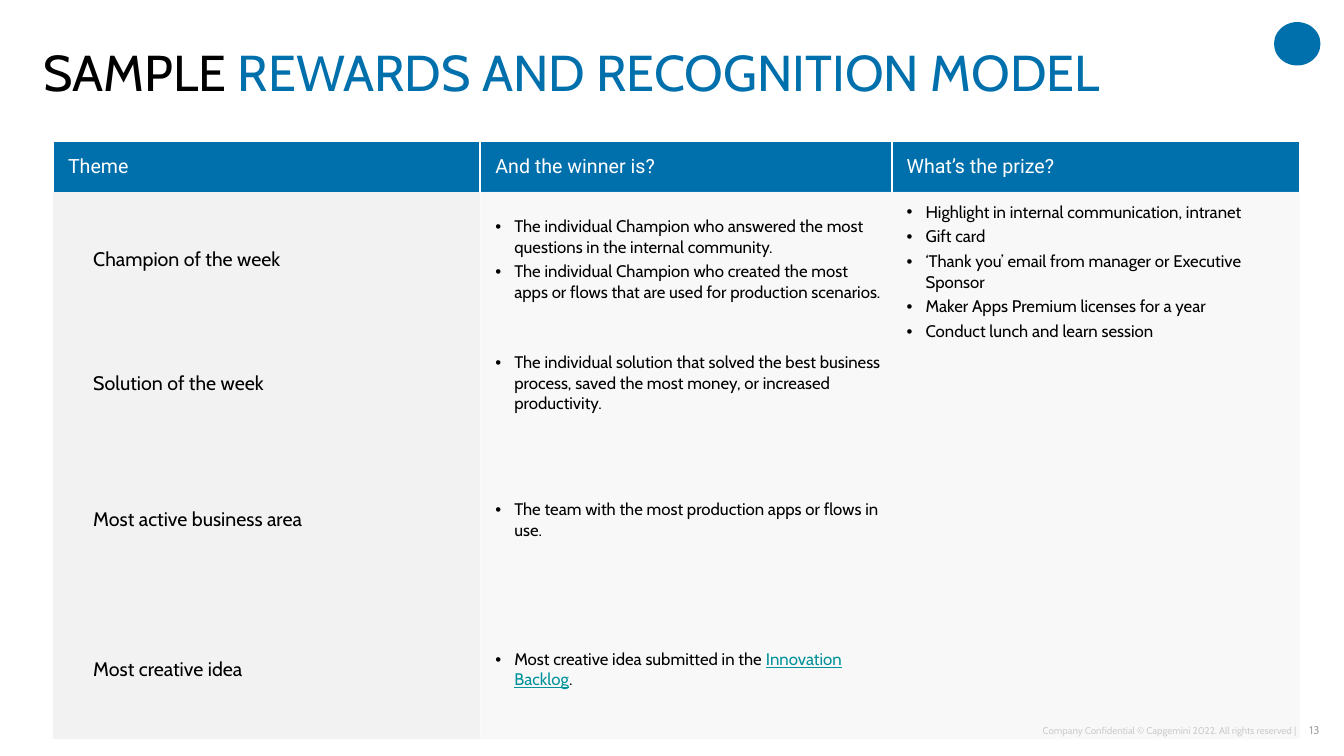
from dataclasses import dataclass
from lxml.etree import SubElement
from pptx import Presentation
from pptx.dml.color import RGBColor
from pptx.enum.shapes import MSO_SHAPE
from pptx.enum.text import MSO_ANCHOR, PP_ALIGN
from pptx.oxml import parse_xml
from pptx.oxml.ns import nsdecls, qn
from pptx.util import Pt


@dataclass(frozen=True)
class Theme:
    """Colours, fonts and type sizes of the slide."""
    blue: str = "0070AD"
    link: str = "00929B"
    black: str = "000000"
    white: str = "FFFFFF"
    pale: str = "F2F2F2"
    grey: str = "A6A6A6"
    font: str = "Cabin"
    head: str = "Roboto"
    title: float = 36
    label: float = 14
    body: float = 12
    page: float = 8
    foot: float = 7
    grid: str = "{2D5ABB26-0587-4C30-8999-92F81FD0307C}"


def apply(item, form):
    """Set each format value on the item."""
    for name, value in form.items():
        setattr(item, name, value)


def inset(left, top, right, low):
    """Return margins as format values."""
    names = ("margin_left", "margin_top", "margin_right", "margin_bottom")
    return {name: Pt(gap) for name, gap in zip(names, (left, top, right, low))}


class Board:
    """Draws elements on one slide in one style."""

    def __init__(self, slide, theme):
        """Keep the slide and its theme."""
        self.slide = slide
        self.theme = theme

    def letter(self, frame, paras, size, color, face=None, form=None, dots=False):
        """Fill a frame with paragraphs of plain or coloured runs."""
        for num, runs in enumerate(paras):
            para = frame.add_paragraph() if num else frame.paragraphs[0]
            if dots:
                self.dot(para)
            apply(para, form or {})
            for part in [runs] if isinstance(runs, str) else runs:
                text, tint = (part, color) if isinstance(part, str) else part
                run = para.add_run()
                run.text = text
                look = {"name": face or self.theme.font, "size": Pt(size),
                        "bold": False, "underline": tint == self.theme.link}
                apply(run.font, look)
                run.font.color.rgb = RGBColor.from_string(tint)

    def dot(self, para):
        """Give a paragraph a hanging bullet."""
        props = para._p.get_or_add_pPr()
        props.set("marL", str(Pt(13.5)))
        props.set("indent", str(-Pt(13.5)))
        SubElement(props, qn("a:buFont"), typeface="Arial")
        SubElement(props, qn("a:buChar"), char="•")
        para.space_after = Pt(3)

    def text(self, area, runs, size, color, pad=0, anchor=MSO_ANCHOR.TOP, form=None):
        """Add a text box."""
        frame = self.slide.shapes.add_textbox(*map(Pt, area)).text_frame
        apply(frame, {"word_wrap": True, "vertical_anchor": anchor,
                      **inset(0, pad, 0, pad)})
        self.letter(frame, [runs], size, color, form=form)

    def mark(self, area):
        """Add a plain oval."""
        oval = self.slide.shapes.add_shape(MSO_SHAPE.OVAL, *map(Pt, area))
        oval.shadow.inherit = False
        oval.fill.solid()
        oval.fill.fore_color.rgb = RGBColor.from_string(self.theme.blue)
        oval.line.fill.background()

    def table(self, left, top, cols, rows):
        """Add a plain table with the given column widths and row heights."""
        area = map(Pt, (left, top, sum(cols), sum(rows)))
        table = self.slide.shapes.add_table(len(rows), len(cols), *area).table
        table.horz_banding = False
        table._tbl.tblPr.find(qn("a:tableStyleId")).text = self.theme.grid
        for col, width in zip(table.columns, cols):
            col.width = Pt(width)
        for row, height in zip(table.rows, rows):
            row.height = Pt(height)
        return table

    def cell(self, cell, paras, size, color, fill, left=10.8, face=None,
             alpha=100, anchor=MSO_ANCHOR.MIDDLE, dots=False):
        """Fill and letter a table cell."""
        apply(cell, {"vertical_anchor": anchor, **inset(left, 7.2, 7.2, 7.2)})
        cell.fill.solid()
        cell.fill.fore_color.rgb = RGBColor.from_string(fill)
        if alpha < 100:
            tint = cell._tc.tcPr.find(".//" + qn("a:srgbClr"))
            SubElement(tint, qn("a:alpha"), val=str(alpha * 1000))
        self.letter(cell.text_frame, paras, size, color, face, dots=dots)

    def edge(self, cell, sides, color, width):
        """Draw borders on the given sides of a cell."""
        for spot, side in enumerate(sides):
            line = parse_xml(
                f'<a:ln{side} {nsdecls("a")} w="{Pt(width)}"><a:solidFill>'
                f'<a:srgbClr val="{color}"/></a:solidFill></a:ln{side}>')
            cell._tc.tcPr.insert(spot, line)


def main():
    """Build and save the slide."""
    theme = Theme()
    deck = Presentation()
    apply(deck, {"slide_width": Pt(960), "slide_height": Pt(540)})
    board = Board(deck.slides.add_slide(deck.slide_layouts[6]), theme)

    board.mark((910, 15.8, 33.2, 31))
    right = {"alignment": PP_ALIGN.RIGHT}
    board.text((924.5, 513.4, 18, 17.3), "13", theme.page, theme.grey, 3.6, form=right)
    board.text((568.8, 513.4, 357.1, 17.3),
               "Company Confidential © Capgemini 2022. All rights reserved |",
               theme.foot, theme.grey, anchor=MSO_ANCHOR.MIDDLE, form=right)
    board.text((31, 29.5, 897.8, 43.9),
               ["SAMPLE ", ("REWARDS AND RECOGNITION MODEL", theme.blue)],
               theme.title, theme.black, anchor=MSO_ANCHOR.BOTTOM,
               form={"line_spacing": 0.9})

    heads = ("Theme", "And the winner is?", "What’s the prize?")
    awards = {
        "Champion of the week": [
            "The individual Champion who answered the most questions in the "
            "internal community.",
            "The individual Champion who created the most apps or flows that "
            "are used for production scenarios."],
        "Solution of the week": [
            "The individual solution that solved the best business process, "
            "saved the most money, or increased productivity."],
        "Most active business area": [
            "The team with the most production apps or flows in use."],
        "Most creative idea": [
            ["Most creative idea submitted in the ",
             ("Innovation Backlog", theme.link), "."]],
    }
    prizes = ["Highlight in internal communication, intranet", "Gift card",
              "‘Thank you’ email from manager or Executive Sponsor",
              "Maker Apps Premium licenses for a year",
              "Conduct lunch and learn session"]

    table = board.table(37.8, 101, (305.3, 293.8, 291.6),
                        (36, 96.5, 80.6, 114.5, 99.4))
    for col, head in enumerate(heads):
        cell = table.cell(0, col)
        board.cell(cell, [head], theme.label, theme.white, theme.blue, face=theme.head)
        board.edge(cell, "LRT", theme.white, 1.5)
    for row, (name, wins) in enumerate(awards.items(), 1):
        board.cell(table.cell(row, 0), [name], theme.label, theme.black,
                   theme.pale, left=28.8)
        board.cell(table.cell(row, 1), wins, theme.body, theme.black,
                   theme.pale, alpha=50, dots=True)
    prize = table.cell(1, 2)
    prize.merge(table.cell(len(awards), 2))
    board.cell(prize, prizes, theme.body, theme.black, theme.pale, alpha=50,
               anchor=MSO_ANCHOR.TOP, dots=True)
    deck.save("out.pptx")


if __name__ == "__main__":
    main()
